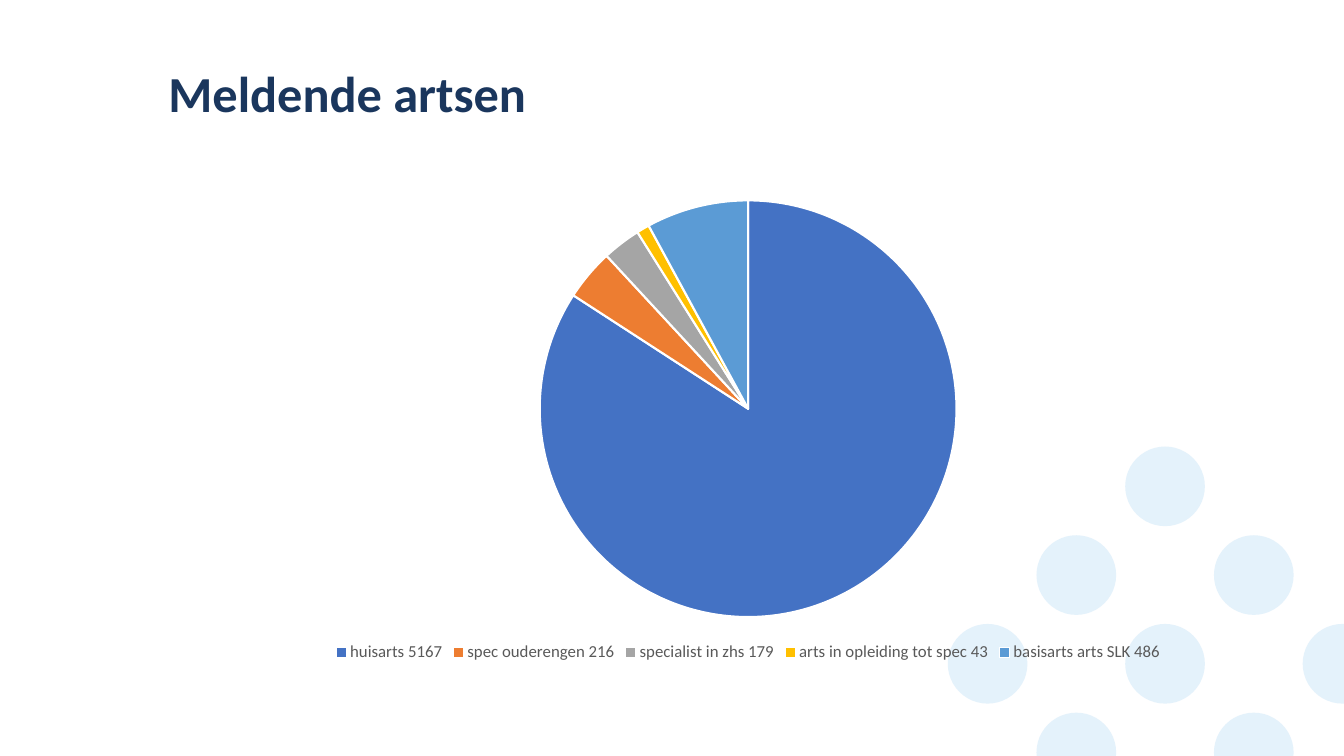
from lxml import etree
from pptx import Presentation
from pptx.chart.data import CategoryChartData
from pptx.dml.color import RGBColor
from pptx.enum.chart import XL_CHART_TYPE, XL_LEGEND_POSITION
from pptx.enum.shapes import MSO_SHAPE
from pptx.enum.text import MSO_ANCHOR, PP_ALIGN
from pptx.oxml.ns import qn
from pptx.util import Pt

PIE = XL_CHART_TYPE.PIE
BOTTOM = XL_LEGEND_POSITION.BOTTOM
OVAL = MSO_SHAPE.OVAL
TOP = MSO_ANCHOR.TOP
LEFT = PP_ALIGN.LEFT

EMU_PER_PX = 9144
FONT = "Calibri"
WHITE = RGBColor(0xFF, 0xFF, 0xFF)
BLACK = RGBColor(0x00, 0x00, 0x00)
NAVY = RGBColor(0x1A, 0x36, 0x5D)
GRAY = RGBColor(0x59, 0x59, 0x59)
PALE_BLUE = RGBColor(0xA8, 0xD5, 0xF4)
SLICE_COLORS = [
    RGBColor(0x44, 0x72, 0xC4),
    RGBColor(0xED, 0x7D, 0x31),
    RGBColor(0xA5, 0xA5, 0xA5),
    RGBColor(0xFF, 0xC0, 0x00),
    RGBColor(0x5B, 0x9B, 0xD5),
]

REPORTS = {
    "huisarts": 5167,
    "spec ouderengen": 216,
    "specialist in zhs": 179,
    "arts in opleiding tot spec": 43,
    "basisarts arts SLK": 486,
}
DOT_COLUMNS_BY_ROW = [(2,), (1, 3), (0, 2, 4), (1, 3)]
DOT_LEFT, DOT_TOP, DOT_PITCH, DOT_SIZE = 940, 443, 88, 79


def px(*lengths):
    return [length * EMU_PER_PX for length in lengths]


presentation = Presentation()
presentation.slide_width, presentation.slide_height = px(1333, 750)
slide = presentation.slides.add_slide(presentation.slide_layouts[5])
slide.background.fill.solid()
slide.background.fill.fore_color.rgb = WHITE

title = slide.shapes.title
title.left, title.top, title.width, title.height = px(167, 68, 1150, 116)
frame = title.text_frame
frame.text = "Meldende artsen"
frame.word_wrap = True
frame.vertical_anchor = TOP
frame.margin_left = frame.margin_right = frame.margin_top = frame.margin_bottom = 0
paragraph = frame.paragraphs[0]
paragraph.alignment = LEFT
paragraph.line_spacing = 0.9
font = paragraph.runs[0].font
font.name, font.size, font.bold = FONT, Pt(36), True
font.color.rgb = NAVY

for row, columns in enumerate(DOT_COLUMNS_BY_ROW):
    for column in columns:
        left = DOT_LEFT + column * DOT_PITCH
        top = DOT_TOP + row * DOT_PITCH
        dot = slide.shapes.add_shape(OVAL, *px(left, top, DOT_SIZE, DOT_SIZE))
        dot.shadow.inherit = False
        dot.line.fill.background()
        dot.fill.solid()
        dot.fill.fore_color.rgb = PALE_BLUE
        color = dot.fill._xPr.find(qn("a:solidFill"))[0]
        etree.SubElement(color, qn("a:alpha")).set("val", "30000")

total = sum(REPORTS.values())
chart_data = CategoryChartData()
chart_data.categories = [f"{doctor} {count}" for doctor, count in REPORTS.items()]
chart_data.add_series(
    "Series 1", [round(100 * count / total) for count in REPORTS.values()]
)
chart = slide.shapes.add_chart(PIE, *px(167, 185, 1150, 476), chart_data).chart
chart.has_title = False
chart.font.name, chart.font.size = FONT, Pt(10)
chart.font.color.rgb = BLACK
chart.has_legend = True
legend = chart.legend
legend.position = BOTTOM
legend.include_in_layout = False
legend.font.name, legend.font.size = FONT, Pt(12)
legend.font.color.rgb = GRAY

plot = chart.plots[0]
plot.vary_by_categories = True
for index, slice_color in enumerate(SLICE_COLORS):
    slice_format = plot.series[0].points[index].format
    slice_format.fill.solid()
    slice_format.fill.fore_color.rgb = slice_color
    slice_format.line.color.rgb = WHITE
    slice_format.line.width = Pt(1.5)

presentation.save("out.pptx")
